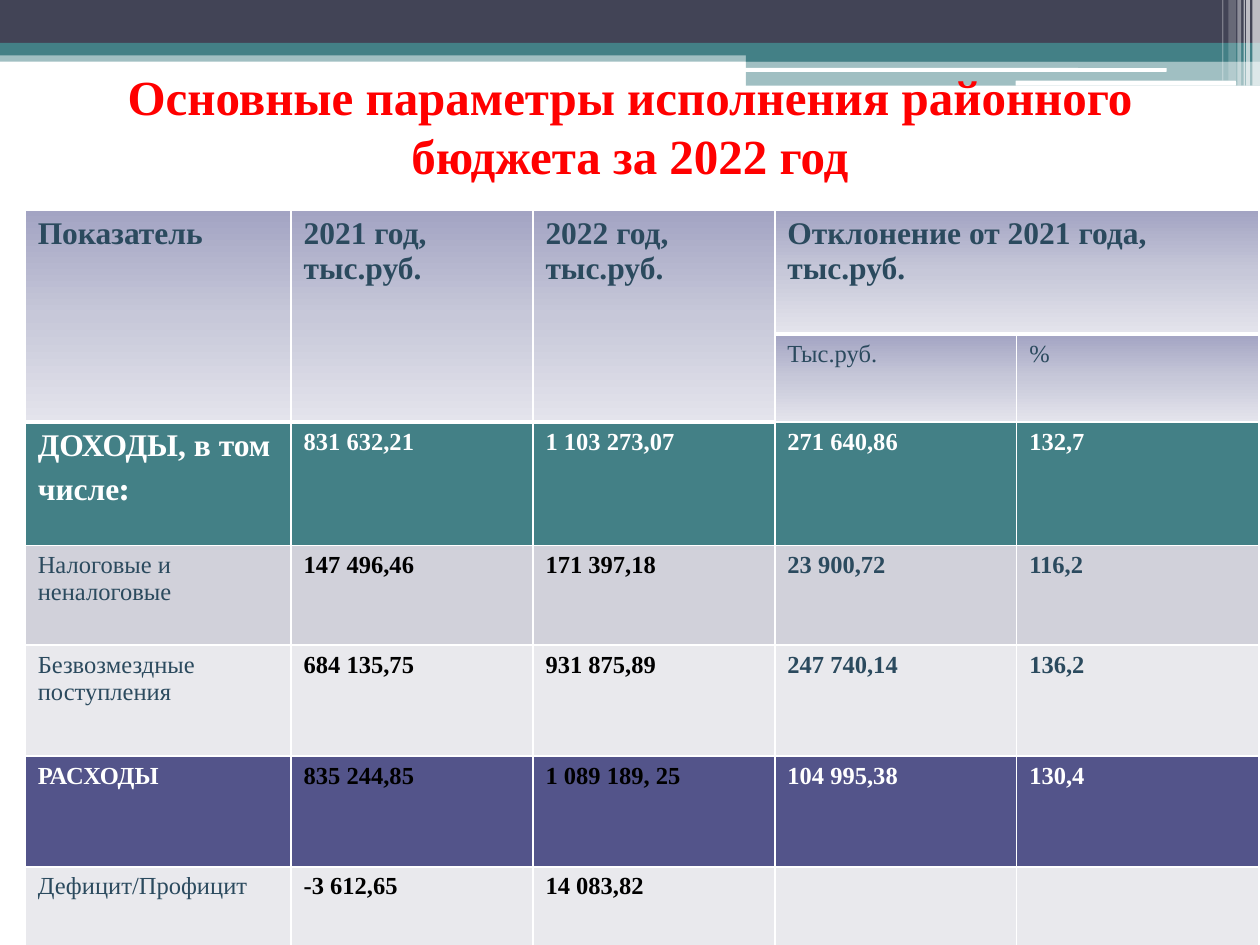
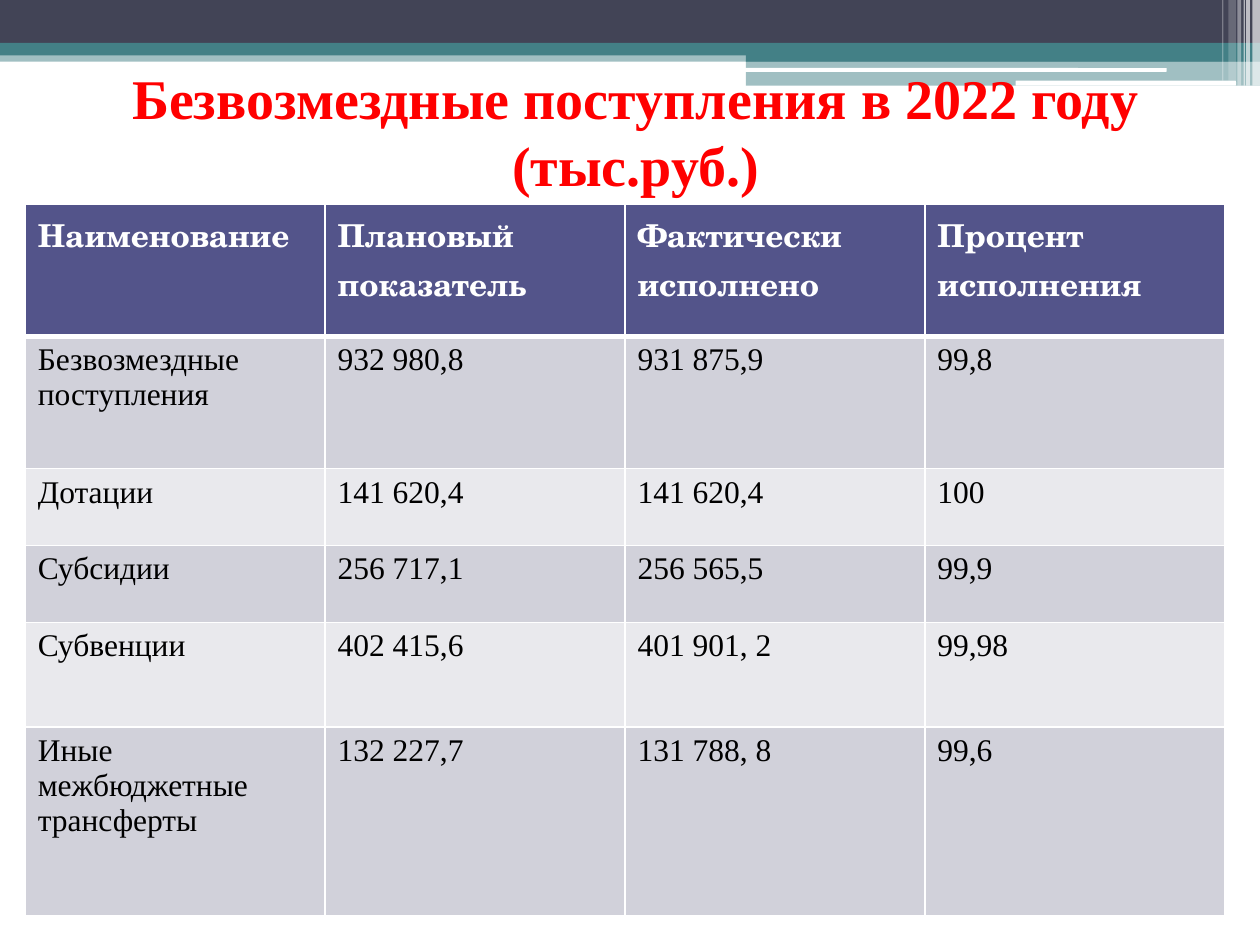
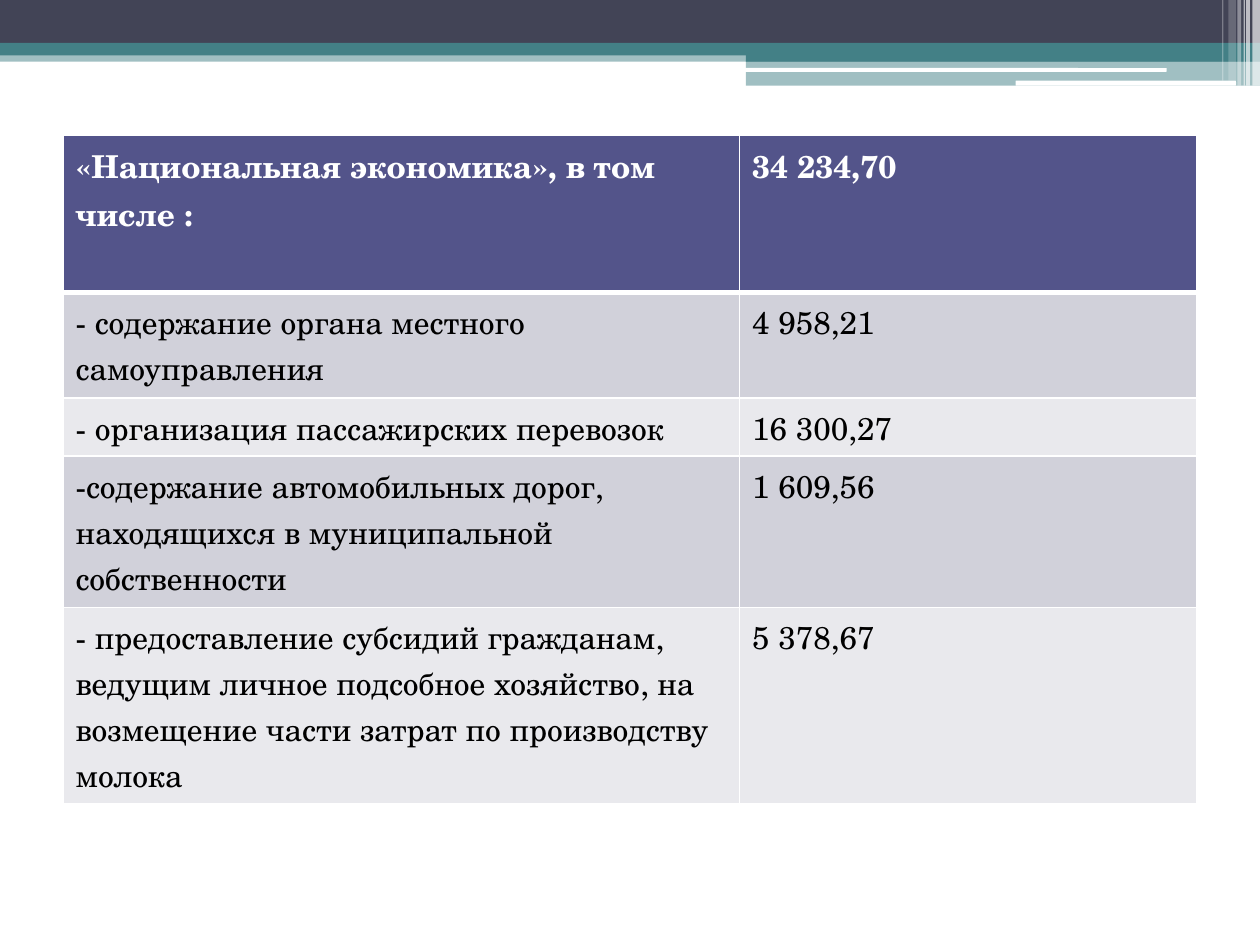
from dataclasses import dataclass

from lxml.etree import SubElement
from pptx import Presentation
from pptx.dml.color import RGBColor
from pptx.enum.shapes import MSO_SHAPE
from pptx.enum.text import MSO_ANCHOR, PP_ALIGN
from pptx.oxml.ns import qn
from pptx.util import Inches, Pt

RECT, ROUNDED = MSO_SHAPE.RECTANGLE, MSO_SHAPE.ROUNDED_RECTANGLE
CENTER, MIDDLE = PP_ALIGN.CENTER, MSO_ANCHOR.MIDDLE


@dataclass(frozen=True)
class Style:
    size: int
    font: str
    color: str
    bold: bool = False


class Theme:
    SERIF, SCHOOL = "Times New Roman", "TeX Gyre Schola"
    WHITE, BLACK, RED = "FFFFFF", "000000", "FF0000"
    SLATE, TEAL, INDIGO, INK = "424456", "438086", "53548A", "2B4A5E"
    DARK_BAND, LIGHT_BAND = "D1D1DA", "E9E9ED"
    HEADER_GRADIENT = ((0, "A3A4C3"), (50, "C7C8D9"), (100, "E4E4EC"))
    THIN, THICK = 1, 3

    TITLE = Style(28, SERIF, RED, True)
    BIG_TITLE = Style(32, SERIF, RED, True)
    HEADING = Style(18, SERIF, INK, True)
    TOTAL = Style(18, SERIF, WHITE, True)
    TOTAL_MARK = Style(18, SCHOOL, WHITE, True)
    LABEL = Style(14, SERIF, INK)
    VALUE = Style(14, SERIF, BLACK, True)
    CHANGE = Style(14, SERIF, INK, True)
    INVERSE = Style(14, SERIF, WHITE, True)
    SCHOOL_HEADING = Style(18, SCHOOL, WHITE, True)
    SCHOOL_BODY = Style(18, SCHOOL, BLACK)
    BODY = Style(18, SERIF, BLACK)


T = Theme

# left, top, width, height, shape, colour, opacity in percent
BANDS = [
    (0, 0.4, 10, 0.09, RECT, T.TEAL, 50),
    (0, 0, 10, 0.34, RECT, T.SLATE, 100),
    (0, 0.34, 10, 0.1, RECT, T.TEAL, 100),
    (5.92, 0.39, 4.08, 0.1, RECT, T.TEAL, 100),
    (5.92, 0.48, 4.08, 0.2, RECT, T.TEAL, 50),
    (5.91, 0.54, 3.35, 0.03, ROUNDED, T.WHITE, 100),
    (8.06, 0.64, 1.75, 0.04, ROUNDED, T.WHITE, 100),
    (9.94, 0, 0.06, 0.68, RECT, T.WHITE, 65),
    (9.89, 0, 0.03, 0.68, RECT, T.WHITE, 65),
    (9.87, 0, 0.01, 0.68, RECT, T.WHITE, 60),
    (9.82, 0, 0.03, 0.68, RECT, T.WHITE, 40),
    (9.75, 0, 0.06, 0.64, RECT, T.WHITE, 20),
    (9.7, 0, 0.01, 0.64, RECT, T.WHITE, 30),
]

DETAIL = [T.LABEL, T.VALUE, T.VALUE, T.CHANGE, T.CHANGE]

# Each row: height, fill, one style per column, cell texts.
# A cell is a string, a list of (text, style) runs, or None when empty.
BUDGET_ROWS = [
    (0.98, T.HEADER_GRADIENT, [T.HEADING] * 5,
     ["Показатель", "2021 год, тыс.руб.", "2022 год, тыс.руб.",
      "Отклонение от 2021 года, тыс.руб.", None]),
    (0.65, T.HEADER_GRADIENT, [T.LABEL] * 5, [None, None, None, "Тыс.руб.", "%"]),
    (0.98, T.TEAL, [T.INVERSE] * 5,
     [[("ДОХОДЫ, в том числе", T.TOTAL), (":", T.TOTAL_MARK)],
      "831 632,21", "1 103 273,07", "271 640,86", "132,7"]),
    (0.79, T.DARK_BAND, DETAIL,
     ["Налоговые и неналоговые", "147 496,46", "171 397,18", "23 900,72", "116,2"]),
    (0.88, T.LIGHT_BAND, DETAIL,
     ["Безвозмездные поступления", "684 135,75", "931 875,89", "247 740,14", "136,2"]),
    (0.88, T.INDIGO, [T.INVERSE, T.VALUE, T.VALUE, T.INVERSE, T.INVERSE],
     ["РАСХОДЫ", "835 244,85", "1 089 189, 25", "104 995,38", "130,4"]),
    (0.67, T.LIGHT_BAND, DETAIL,
     ["Дефицит/Профицит", "-3 612,65", "14 083,82", None, None]),
]
# first row, first column, last row, last column
BUDGET_MERGES = [(0, 0, 1, 0), (0, 1, 1, 1), (0, 2, 1, 2), (0, 3, 0, 4)]

TRANSFERS = [
    (1.05, ["Наименование", "Плановый показатель", "Фактически исполнено",
            "Процент исполнения"]),
    (1.05, ["Безвозмездные поступления", "932 980,8", "931 875,9", "99,8"]),
    (0.61, ["Дотации", "141 620,4", "141 620,4", "100"]),
    (0.61, ["Субсидии", "256 717,1", "256 565,5", "99,9"]),
    (0.83, ["Субвенции", "402 415,6", "401 901, 2", "99,98"]),
    (1.5, ["Иные межбюджетные трансферты", "132 227,7", "131 788, 8", "99,6"]),
]

ECONOMY = [
    (1.25, ["«Национальная экономика», в том числе :", "34 234,70"]),
    (0.84, ["- содержание органа местного самоуправления", "4 958,21"]),
    (0.46, ["- организация пассажирских перевозок", "16 300,27"]),
    (1.2, ["-содержание автомобильных дорог, находящихся в муниципальной "
           "собственности", "1 609,56"]),
    (1.56, ["- предоставление субсидий гражданам, ведущим личное подсобное "
            "хозяйство, на возмещение части затрат по производству молока",
            "5 378,67"]),
]

SLIDES = [
    dict(title=("Основные параметры исполнения районного бюджета за 2022 год",
                T.TITLE, (0.5, 0.6, 9, 0.79)),
         origin=(0.2, 1.67), columns=[2.11] + [1.92] * 4,
         rows=BUDGET_ROWS, merges=BUDGET_MERGES),
    dict(title=("Безвозмездные поступления в 2022 году (тыс.руб.)",
                T.BIG_TITLE, (0.59, 0.68, 8.91, 0.71)),
         origin=(0.2, 1.62), columns=[2.38] * 4, rows=TRANSFERS, body=T.BODY),
    dict(origin=(0.5, 1.07), columns=[5.37, 3.63], rows=ECONOMY,
         body=T.SCHOOL_BODY),
]


def banded(rows, body):
    """Give plain rows an indigo header and alternating fills."""
    for index, (height, texts) in enumerate(rows):
        if index == 0:
            fill, style = T.INDIGO, T.SCHOOL_HEADING
        else:
            fill, style = (T.DARK_BAND if index % 2 else T.LIGHT_BAND), body
        yield height, fill, [style] * len(texts), texts


def add_run(paragraph, text, style):
    run = paragraph.add_run()
    run.text = text
    run.font.size = Pt(style.size)
    run.font.name = style.font
    run.font.bold = style.bold
    run.font.color.rgb = RGBColor.from_string(style.color)


def add_bands(slide):
    for left, top, width, height, outline, color, opacity in BANDS:
        band = slide.shapes.add_shape(
            outline, *map(Inches, (left, top, width, height)))
        band.shadow.inherit = False
        band.line.fill.background()
        band.fill.solid()
        band.fill.fore_color.rgb = RGBColor.from_string(color)
        if opacity < 100:
            tint = band.element.spPr.find(".//" + qn("a:srgbClr"))
            SubElement(tint, qn("a:alpha"), val=str(opacity * 1000))


def add_title(slide, text, style, place):
    frame = slide.shapes.add_textbox(*map(Inches, place)).text_frame
    frame.word_wrap = True
    frame.vertical_anchor = MIDDLE
    frame.paragraphs[0].alignment = CENTER
    add_run(frame.paragraphs[0], text, style)


def add_solid(parent, color):
    SubElement(SubElement(parent, qn("a:solidFill")), qn("a:srgbClr"), val=color)


def paint_cell(cell, fill, is_header):
    """Set white borders, then a solid or top-to-bottom gradient fill."""
    properties = cell._tc.get_or_add_tcPr()
    widths = {"L": T.THIN, "R": T.THIN, "B": T.THICK if is_header else T.THIN}
    if is_header:
        widths = {"L": T.THIN, "R": T.THIN, "T": T.THIN, "B": T.THICK}
    for side, width in widths.items():
        add_solid(SubElement(properties, qn("a:ln" + side), w=str(Pt(width))), T.WHITE)
    if isinstance(fill, str):
        add_solid(properties, fill)
        return
    gradient = SubElement(properties, qn("a:gradFill"))
    stops = SubElement(gradient, qn("a:gsLst"))
    for position, color in fill:
        stop = SubElement(stops, qn("a:gs"), pos=str(position * 1000))
        SubElement(stop, qn("a:srgbClr"), val=color)
    SubElement(gradient, qn("a:lin"), ang="5400000", scaled="0")


def add_grid(slide, origin, columns, rows, merges=()):
    size = sum(columns), sum(row[0] for row in rows)
    table = slide.shapes.add_table(
        len(rows), len(columns), *map(Inches, origin + size)).table
    table.first_row = table.horz_banding = False
    for column, width in zip(table.columns, columns):
        column.width = Inches(width)
    for first_row, first_col, last_row, last_col in merges:
        table.cell(first_row, first_col).merge(table.cell(last_row, last_col))
    for row_index, (height, fill, styles, contents) in enumerate(rows):
        table.rows[row_index].height = Inches(height)
        for col_index, (style, content) in enumerate(zip(styles, contents)):
            cell = table.cell(row_index, col_index)
            spans_header = cell.is_spanned and col_index < 3
            paint_cell(cell, fill, row_index == 0 or spans_header)
            runs = [(content, style)] if isinstance(content, str) else content or []
            for text, run_style in runs:
                add_run(cell.text_frame.paragraphs[0], text, run_style)


def main():
    deck = Presentation()
    deck.slide_width, deck.slide_height = Inches(10), Inches(7.5)
    blank = deck.slide_layouts[6]
    for content in SLIDES:
        slide = deck.slides.add_slide(blank)
        add_bands(slide)
        if "title" in content:
            add_title(slide, *content["title"])
        rows = content["rows"]
        if "body" in content:
            rows = list(banded(rows, content["body"]))
        add_grid(slide, content["origin"], content["columns"], rows,
                 content.get("merges", ()))
    deck.save("out.pptx")


if __name__ == "__main__":
    main()
